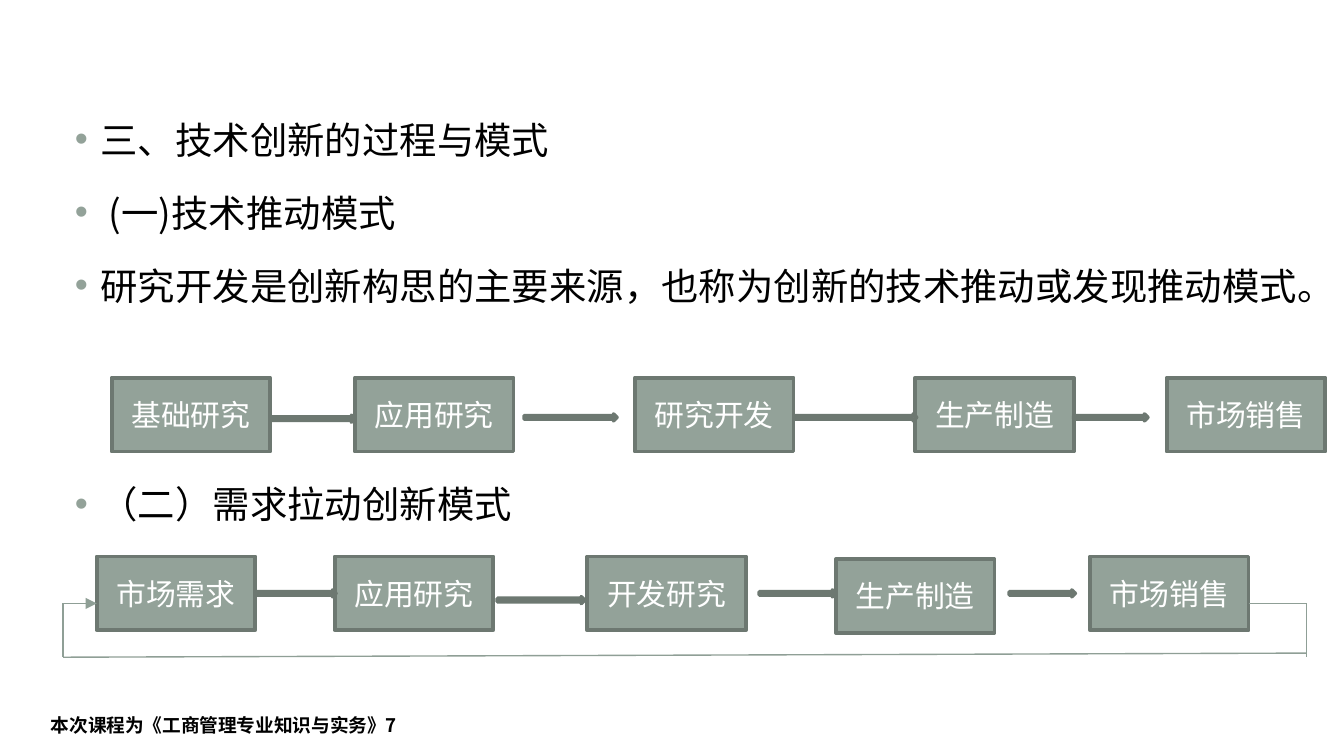
from lxml import etree
from pptx import Presentation
from pptx.dml.color import RGBColor
from pptx.enum.shapes import MSO_CONNECTOR, MSO_SHAPE
from pptx.enum.text import MSO_ANCHOR, PP_ALIGN
from pptx.oxml.ns import qn
from pptx.util import Pt

RECT, ARROW = MSO_SHAPE.RECTANGLE, MSO_SHAPE.RIGHT_ARROW
LINE = MSO_CONNECTOR.STRAIGHT
MIDDLE, CENTER = MSO_ANCHOR.MIDDLE, PP_ALIGN.CENTER
SANS = "Noto Sans CJK SC"
COLORS = {"sage": "93A299", "edge": "6D7871", "loop": "8F9F96",
          "black": "000000", "white": "FFFFFF"}
RGB = {name: RGBColor.from_string(code) for name, code in COLORS.items()}

prs = Presentation()
prs.slide_width, prs.slide_height = Pt(720), Pt(405)
slide = prs.slides.add_slide(prs.slide_layouts[6])
shapes = slide.shapes


def add_block(kind, left, top, width, height):
    block = shapes.add_shape(kind, Pt(left), Pt(top), Pt(width), Pt(height))
    block.shadow.inherit = False
    block.fill.solid()
    block.fill.fore_color.rgb = RGB["sage"]
    block.line.color.rgb = RGB["edge"]
    block.line.width = Pt(2)
    return block


def set_font(para, size, name, color, bold=False):
    font = para.font
    font.size, font.name, font.bold = Pt(size), name, bold
    font.color.rgb = RGB[color]


# Footer
foot = shapes.add_textbox(Pt(20.2), Pt(378.7), Pt(454.3), Pt(19.4)).text_frame
foot.word_wrap = True
foot.text = "本次课程为《工商管理专业知识与实务》7"
set_font(foot.paragraphs[0], 10, SANS, "black", True)

# Bulleted text: the last point leaves room for the first flow
points = [
    ("三、技术创新的过程与模式", 0),
    (" (一)技术推动模式", 0),
    ("研究开发是创新构思的主要来源，也称为创新的技术推动或发现推动模式。", 0),
    ("（二）需求拉动创新模式", 78),
]
body = shapes.add_textbox(Pt(26.6), Pt(43.9), Pt(693.4), Pt(317.5)).text_frame
body.word_wrap = True
for i, (text, gap) in enumerate(points):
    para = body.paragraphs[0] if i == 0 else body.add_paragraph()
    para.text = text
    para.line_spacing = Pt(39.1)
    para.space_before = Pt(gap)
    set_font(para, 20, SANS, "black")
    props = para._p.get_or_add_pPr()
    props.set("marL", str(Pt(20.2)))
    props.set("indent", str(Pt(-13.7)))
    # Bullet parts go ahead of the default run properties
    base = props.find(qn("a:defRPr"))
    tint = etree.Element(qn("a:buClr"))
    etree.SubElement(tint, qn("a:srgbClr"), val=COLORS["sage"])
    face = etree.Element(qn("a:buFont"), typeface="Arial")
    mark = etree.Element(qn("a:buChar"), char="•")
    for part in (tint, face, mark):
        base.addprevious(part)

# Flows: boxes as (text, left, top), arrows as (left, top, width)
flows = [
    ([("基础研究", 59.8, 202.3), ("应用研究", 190.1, 202.3),
      ("研究开发", 340.1, 202.3), ("生产制造", 490.3, 202.3),
      ("市场销售", 625, 202.3)],
     [(144.7, 222.5, 45.4), (280.8, 221.8, 49.7),
      (425.5, 221.8, 65.5), (575.3, 221.8, 39.6)]),
    ([("市场需求", 51.8, 298.1), ("应用研究", 179.3, 298.1),
      ("开发研究", 314.6, 298.1), ("生产制造", 447.8, 299.5),
      ("市场销售", 583.9, 298.1)],
     [(136.8, 316.1, 43.2), (266.4, 319.7, 46.8),
      (406.8, 316.1, 41), (540.7, 316.1, 35.3)]),
]
for steps, arrows in flows:
    for text, left, top in steps:
        frame = add_block(RECT, left, top, 85, 39.6).text_frame
        frame.word_wrap = True
        frame.vertical_anchor = MIDDLE
        frame.text = text
        para = frame.paragraphs[0]
        para.alignment = CENTER
        set_font(para, 16, "Quicksand", "white")
    for left, top, width in arrows:
        add_block(ARROW, left, top, width, 3.6)

# Feedback loop from sales back to demand
west, east, high, low = 33.8, 699.8, 323.3, 352.1
loop = [
    (668.9, high, east, high),
    (west, low, east, 349.9),
    (east, high, east, low),
    (west, low, west, high),
    (west, high, 51.8, high),
]
for ends in loop:
    link = shapes.add_connector(LINE, *[Pt(v) for v in ends])
    link.line.color.rgb = RGB["loop"]
    link.line.width = Pt(0.75)
    etree.SubElement(link._element.spPr, qn("a:effectLst"))
# The last link carries the arrowhead
etree.SubElement(link.line._get_or_add_ln(), qn("a:tailEnd"), type="triangle")

prs.save("out.pptx")
